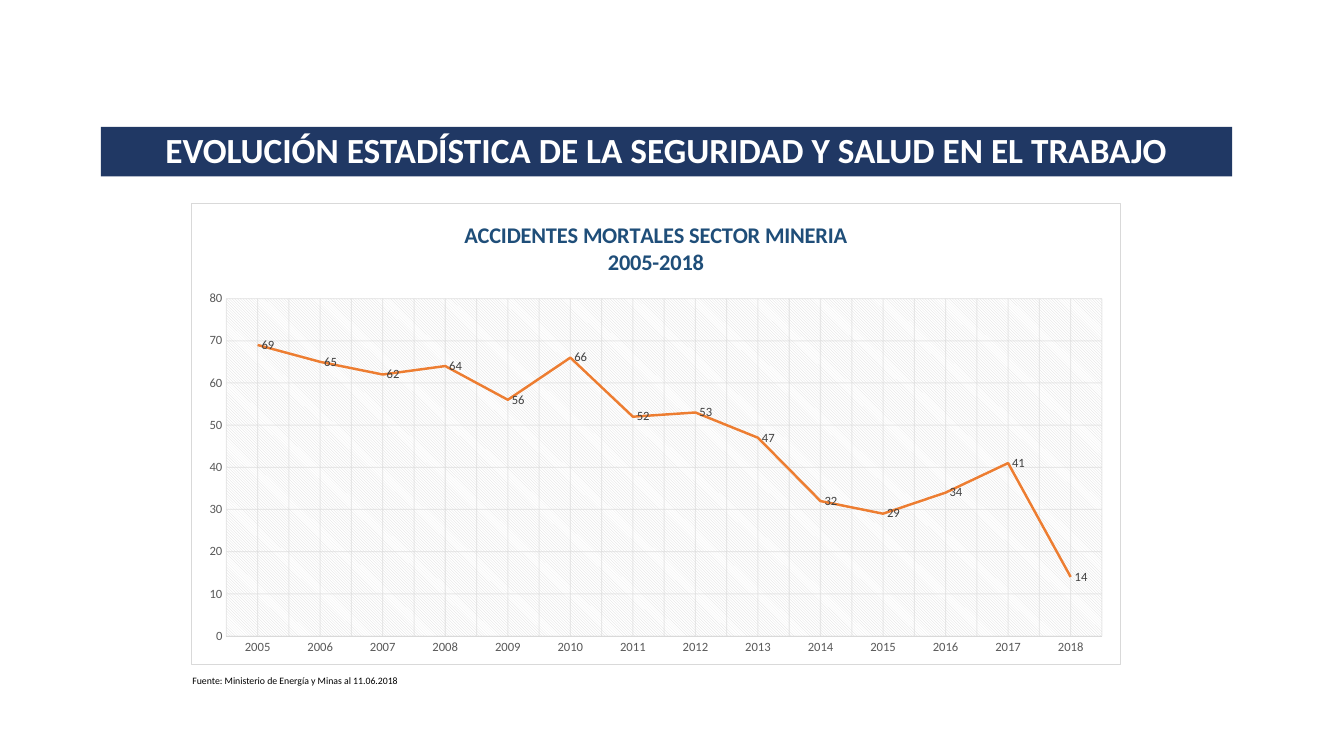
from copy import deepcopy

from lxml.etree import SubElement
from pptx import Presentation
from pptx.chart.data import CategoryChartData
from pptx.dml.color import RGBColor
from pptx.enum.chart import XL_CHART_TYPE as ChartType, XL_LABEL_POSITION as LabelPosition
from pptx.enum.chart import XL_TICK_MARK as TickMark
from pptx.enum.text import MSO_ANCHOR as Anchor, MSO_AUTO_SIZE as AutoSize, PP_ALIGN as Align
from pptx.oxml import parse_xml
from pptx.oxml.ns import nsdecls, qn
from pptx.util import Inches, Pt

COLORS = {
    "band": "203864", "white": "FFFFFF", "heading": "1F4E79", "series": "ED7D31",
    "grid": "D9D9D9", "axis": "595959", "label": "404040", "black": "000000",
}
FONT = "Calibri"
FIRST_YEAR = 2005
DEATHS = (69, 65, 62, 64, 56, 66, 52, 53, 47, 32, 29, 34, 41, 14)
PLOT_SHARES = {"x": 0.038, "y": 0.207, "w": 0.942, "h": 0.731}


def color(name):
    return RGBColor.from_string(COLORS[name])


def style_font(font, size, name, bold=False):
    font.name, font.size, font.bold = FONT, Pt(size), bold
    font.color.rgb = color(name)


def style_line(line, name, width=0.75):
    line.color.rgb = color(name)
    line.width = Pt(width)


def area_format(fill, border):
    return parse_xml(f'<c:spPr {nsdecls("c", "a")}>{fill}{border}</c:spPr>')


def solid(name):
    return f'<a:solidFill><a:srgbClr val="{COLORS[name]}"/></a:solidFill>'


def add_banner(page, box):
    title = page.shapes.title
    title.left, title.top, title.width, title.height = box
    title.fill.solid()
    title.fill.fore_color.rgb = color("band")
    frame = title.text_frame
    frame.text = "EVOLUCIÓN ESTADÍSTICA DE LA SEGURIDAD Y SALUD EN EL TRABAJO"
    frame.auto_size, frame.vertical_anchor = AutoSize.NONE, Anchor.MIDDLE
    para = frame.paragraphs[0]
    para.alignment, para.line_spacing = Align.CENTER, 0.9
    style_font(para.runs[0].font, 25.2, "white", bold=True)


def style_axes(chart):
    years, deaths = chart.category_axis, chart.value_axis
    for axis in (years, deaths):
        axis.major_tick_mark = axis.minor_tick_mark = TickMark.NONE
        style_font(axis.tick_labels.font, 9, "axis")
        axis.has_major_gridlines = True
        style_line(axis.major_gridlines.format.line, "grid")
    years.has_minor_gridlines = True
    style_line(years.format.line, "grid")
    deaths.format.line.fill.background()
    deaths.minimum_scale, deaths.maximum_scale, deaths.major_unit = 0, 80, 10


def soften_gridlines(chart):
    """Make the gridlines translucent and give the minor ones the same look."""
    for gridlines in chart.element.iter(qn("c:majorGridlines")):
        for rgb in gridlines.iter(qn("a:srgbClr")):
            SubElement(rgb, qn("a:alpha"), val="54000")
    for minor in chart.element.iter(qn("c:minorGridlines")):
        major = minor.getparent().find(qn("c:majorGridlines"))
        minor.append(deepcopy(major.find(qn("c:spPr"))))


def style_areas(chart):
    """Frame the chart, hatch the plot and fix where the plot lies."""
    root = chart.element.find(qn("c:chart"))
    border = f'<a:ln w="{Pt(0.75)}">{solid("grid")}</a:ln>'
    root.addnext(area_format(solid("white"), border))
    plot_area = root.find(qn("c:plotArea"))
    hatch = (f'<a:pattFill prst="ltDnDiag"><a:fgClr><a:srgbClr val="{COLORS["grid"]}"/></a:fgClr>'
             f'<a:bgClr><a:srgbClr val="{COLORS["white"]}"/></a:bgClr></a:pattFill>')
    plot_area.append(area_format(hatch, "<a:ln><a:noFill/></a:ln>"))
    for layout in plot_area.findall(qn("c:layout")):
        plot_area.remove(layout)
    modes = '<c:xMode val="edge"/><c:yMode val="edge"/>'
    shares = "".join(f'<c:{key} val="{share}"/>' for key, share in PLOT_SHARES.items())
    plot_area.insert(0, parse_xml(
        f'<c:layout {nsdecls("c")}><c:manualLayout><c:layoutTarget val="inner"/>'
        f'{modes}{shares}</c:manualLayout></c:layout>'))


def add_deaths_chart(page, box):
    data = CategoryChartData()
    data.categories = [str(FIRST_YEAR + i) for i in range(len(DEATHS))]
    data.add_series("Series 1", DEATHS)
    chart = page.shapes.add_chart(ChartType.LINE, *box, data).chart
    style_font(chart.font, 10, "black")
    chart.has_legend = False
    chart.has_title = True
    heading = chart.chart_title.text_frame
    heading.text = "ACCIDENTES MORTALES SECTOR MINERIA\n2005-2018"
    for para in heading.paragraphs:
        style_font(para.runs[0].font, 16, "heading", bold=True)
    style_axes(chart)
    soften_gridlines(chart)
    plot = chart.plots[0]
    plot.vary_by_categories = False
    series = plot.series[0]
    series.smooth = False
    style_line(series.format.line, "series", 1.75)
    labels = series.data_labels
    labels.show_value, labels.position = True, LabelPosition.RIGHT
    style_font(labels.font, 9, "label")
    style_areas(chart)


def add_source_note(page, box):
    frame = page.shapes.add_textbox(*box).text_frame
    frame.text = "Fuente: Ministerio de Energía y Minas al 11.06.2018"
    frame.word_wrap, frame.auto_size = False, AutoSize.SHAPE_TO_FIT_TEXT
    style_font(frame.paragraphs[0].runs[0].font, 7, "black")


def inches(*lengths):
    return [Inches(length) for length in lengths]


def main():
    deck = Presentation()
    deck.slide_width, deck.slide_height = inches(13.33, 7.5)
    page = deck.slides.add_slide(deck.slide_layouts.get_by_name("Title Only"))
    add_banner(page, inches(1, 1.26, 11.22, 0.49))
    add_deaths_chart(page, inches(1.89, 2.01, 9.23, 4.59))
    add_source_note(page, inches(1.81, 6.64, 2.28, 0.22))
    deck.save("out.pptx")


if __name__ == "__main__":
    main()
